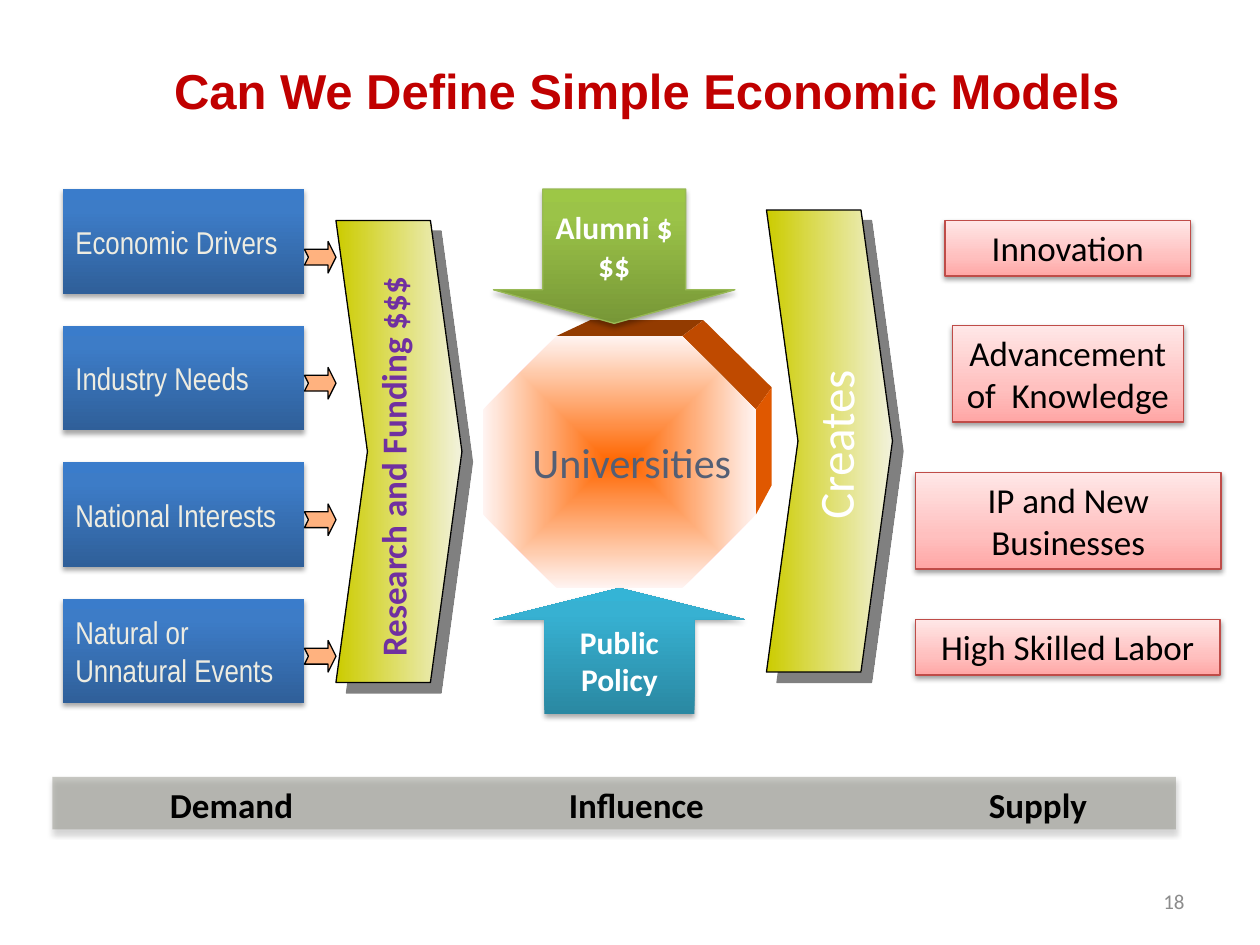
"""Build a slide on a demand, influence and supply model of universities."""
import pptx
import pptx.util
import pptx.dml.color
import pptx.enum.shapes
import pptx.enum.text
import pptx.oxml.ns
from lxml import etree

PX = 914400 // 120
SHAPE = pptx.enum.shapes.MSO_SHAPE
ALIGN = pptx.enum.text.PP_ALIGN
ANCHOR = pptx.enum.text.MSO_ANCHOR
AUTO = pptx.enum.text.MSO_AUTO_SIZE

TITLE = "Can We Define Simple Economic Models"
DEMANDS = [
    ("Economic Drivers", 230),
    ("Industry Needs", 350),
    ("National Interests", 480),
    ("Natural or Unnatural Events", 610),
]
SUPPLIES = [
    ("Innovation", (900, 210, 234, 53)),
    ("Advancement of  Knowledge", (907, 310, 220, 92)),
    ("IP and New Businesses", (872, 450, 291, 92)),
    ("High Skilled Labor", (872, 590, 290, 53)),
]
INFLUENCES = [
    ("Public Policy", SHAPE.UP_ARROW, (470, 560, 240, 120), 0.596,
     [(0, "2A88A2"), (80, "37B1D2"), (100, "34B4D6")], None),
    ("Alumni $$$", SHAPE.DOWN_ARROW, (470, 180, 230, 128), 0.592,
     [(0, "779737"), (80, "9BC348"), (100, "9DC746")], "98B955"),
]
COLUMNS = [("Demand", 150, 143), ("Influence", 530, 155), ("Supply", 930, 119)]
CHEVRONS = [(320, 210, 120, 440), (730, 200, 120, 440)]
OCTAGON_SIDES = [
    ("933B00", [(530, 320), (562, 305), (670, 305), (650, 320)]),
    ("BF4A00", [(650, 320), (670, 305), (735, 369), (720, 390)]),
    ("E05800", [(720, 390), (735, 369), (735, 462), (720, 490)]),
]
BLUE = [(0, "2F5F99"), (80, "3D7CC7"), (100, "3A7CCB")]
PINK = [(0, "FFA6A5"), (35, "FFC0BF"), (100, "FFE7E7")]
YELLOW = [(0, "CCCC00"), (100, "F2F2DC")]
ORANGE = [(0, "FF6600"), (100, "FFF4F2")]
SOFT = ("000000", 35, 3.1, 1.8, 90)
PINK_SHADOW = ("000000", 38, 3.1, 1.6, 90)
BAR_SHADOW = ("000000", 32, 3.5, 2.2, 90)
HARD = ("808080", 100, 0, 8.5, 45)
LETTER_SHADOW = ("000000", 100, 0, 3, 45)


def rgb(value):
    return pptx.dml.color.RGBColor.from_string(value)


def add(parent, tag, **attributes):
    values = {key: str(value) for key, value in attributes.items()}
    return etree.SubElement(parent, pptx.oxml.ns.qn("a:" + tag), values)


def cast(effects, shadow):
    color, alpha, blur, distance, angle = shadow
    outer = add(effects, "outerShdw", blurRad=int(blur * 12700), dist=int(distance * 12700),
                dir=angle * 60000, algn="ctr", rotWithShape=0)
    add(add(outer, "srgbClr", val=color), "alpha", val=alpha * 1000)


def paint(shape, color, alpha=100):
    shape.fill.solid()
    shape.fill.fore_color.rgb = rgb(color)
    if alpha < 100:
        swatch = next(shape._element.spPr.iter(pptx.oxml.ns.qn("a:srgbClr")))
        add(swatch, "alpha", val=alpha * 1000)


def blend(shape, stops, angle=None):
    shape.fill.background()
    properties = shape._element.spPr
    empty = properties.find(pptx.oxml.ns.qn("a:noFill"))
    gradient = add(properties, "gradFill", rotWithShape=1)
    stop_list = add(gradient, "gsLst")
    for position, color in stops:
        add(add(stop_list, "gs", pos=position * 1000), "srgbClr", val=color)
    if angle is None:
        center = add(gradient, "path", path="shape")
        add(center, "fillToRect", l=50000, t=50000, r=50000, b=50000)
    else:
        add(gradient, "lin", ang=angle * 60000, scaled=0)
    properties.replace(empty, gradient)


def finish(shape, line=None, shadow=None):
    shape.shadow.inherit = False
    if shadow:
        cast(shape._element.spPr.find(pptx.oxml.ns.qn("a:effectLst")), shadow)
    if line:
        shape.line.color.rgb = rgb(line)
        shape.line.width = pptx.util.Pt(0.75)
    else:
        shape.line.fill.background()


def draw(slide, kind, box, line=None, shadow=None, adjust=()):
    shape = slide.shapes.add_shape(kind, *(length * PX for length in box))
    for index, value in enumerate(adjust):
        shape.adjustments[index] = value
    finish(shape, line, shadow)
    return shape


def write(shape, text, size, color, font="Calibri", bold=False, align=ALIGN.LEFT,
          anchor=ANCHOR.MIDDLE, wrap=True, grow=False):
    frame = shape.text_frame
    frame.word_wrap = wrap
    frame.vertical_anchor = anchor
    if grow:
        frame.auto_size = AUTO.SHAPE_TO_FIT_TEXT
    frame.paragraphs[0].alignment = align
    run = frame.paragraphs[0].add_run()
    run.text = text
    run.font.size = pptx.util.Pt(size)
    run.font.name = font
    run.font.bold = bold
    run.font.color.rgb = rgb(color)
    return run


def label(slide, box, text, size, color, rotation=0, **style):
    holder = slide.shapes.add_textbox(*(length * PX for length in box))
    holder.rotation = rotation
    options = {"anchor": ANCHOR.TOP, "wrap": False, "grow": True, **style}
    return write(holder, text, size, color, **options)


def main():
    deck = pptx.Presentation()
    deck.slide_width, deck.slide_height = 1200 * PX, 900 * PX
    slide = deck.slides.add_slide(deck.slide_layouts[6])

    for box in CHEVRONS:
        blend(draw(slide, SHAPE.CHEVRON, box, "000000", HARD, [0.25]), YELLOW, 0)

    for color, points in OCTAGON_SIDES:
        builder = slide.shapes.build_freeform(*points[0], scale=PX)
        builder.add_line_segments(points[1:])
        side = builder.convert_to_shape()
        paint(side, color)
        finish(side)
    universities = draw(slide, SHAPE.OCTAGON, (460, 320, 260, 240), adjust=[0.293])
    blend(universities, ORANGE)
    write(universities, "Universities", 24, "545F75", wrap=False)

    for row, (text, arrow_top) in enumerate(DEMANDS):
        demand = draw(slide, SHAPE.RECTANGLE, (60, 180 + 130 * row, 230, 100), shadow=SOFT)
        blend(demand, BLUE, 270)
        write(demand, text, 18, "EEECE1", font="Arial Narrow")
        arrow = draw(slide, SHAPE.NOTCHED_RIGHT_ARROW, (290, arrow_top, 30, 30), "000000",
                     adjust=[0.5, 0.25])
        paint(arrow, "FF6600", 50)

    for text, box in SUPPLIES:
        supply = draw(slide, SHAPE.RECTANGLE, box, "BF4C48", PINK_SHADOW)
        blend(supply, PINK, 270)
        write(supply, text, 20, "000000", align=ALIGN.CENTER, anchor=ANCHOR.TOP, grow=True)

    for text, kind, box, shaft, stops, line in INFLUENCES:
        influence = draw(slide, kind, box, line, SOFT, [shaft, 0.25])
        blend(influence, stops, 270)
        write(influence, text, 18, "FFFFFF", bold=True, align=ALIGN.CENTER)

    bar = draw(slide, SHAPE.RECTANGLE, (50, 740, 1070, 50), shadow=BAR_SHADOW)
    paint(bar, "94958B", 50)
    for text, left, width in COLUMNS:
        label(slide, (left, 740, width, 53), text, 20, "000000", bold=True)

    label(slide, (180, 418, 389, 53), "Research and Funding $$$", 20, "7030A0", 270,
          bold=True, align=ALIGN.CENTER)
    creates = label(slide, (694, 377, 196, 62), "Creates", 28, "FFFFFF", 270.4)
    effects = etree.Element(pptx.oxml.ns.qn("a:effectLst"))
    cast(effects, LETTER_SHADOW)
    creates.font._element.find(pptx.oxml.ns.qn("a:solidFill")).addnext(effects)

    label(slide, (154, 52, 935, 68), TITLE, 28, "C00000", font="Arial", bold=True)
    label(slide, (860, 834, 280, 48), "18", 12, "8C8C8C", align=ALIGN.RIGHT,
          anchor=ANCHOR.MIDDLE, wrap=True, grow=False)
    deck.save("out.pptx")


if __name__ == "__main__":
    main()
